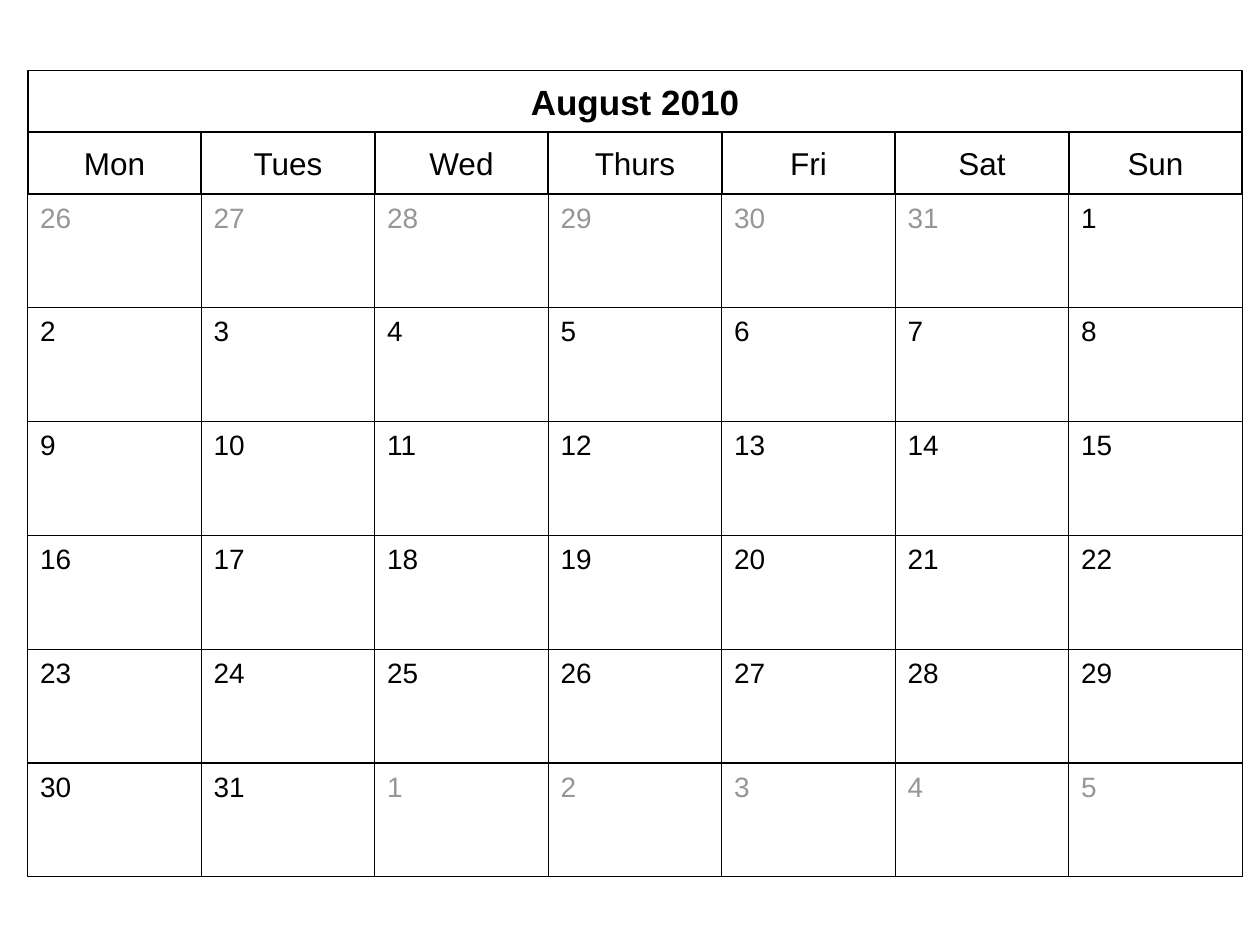
from pptx import Presentation
from pptx import util as u
from pptx.dml.color import RGBColor
from pptx.enum import shapes, text

BLACK = RGBColor(0x00, 0x00, 0x00)
WHITE = RGBColor(0xFF, 0xFF, 0xFF)
GREY = RGBColor(0x96, 0x96, 0x96)
FONT = "Arial"
WEEKDAYS = ["Mon", "Tues", "Wed", "Thurs", "Fri", "Sat", "Sun"]
WEEKS = 6
MONTH_DAYS = 31
PREVIOUS_DAYS = range(26, 32)
NEXT_DAYS = range(1, 6)


def write(box, words, size, color, bold=False):
    """Put one formatted run in the box and return its paragraph."""
    box.text_frame.word_wrap = True
    para = box.text_frame.paragraphs[0]
    span = para.add_run()
    span.text = words
    span.font.name = FONT
    span.font.size = u.Pt(size)
    span.font.bold = bold
    span.font.color.rgb = color
    return para


def style_header(box, words, size, bold=False):
    """Give a box the white, centred look of the calendar head."""
    box.fill.solid()
    box.fill.fore_color.rgb = WHITE
    box.line.color.rgb = BLACK
    box.line.width = u.Pt(1)
    frame = box.text_frame
    frame.auto_size = text.MSO_AUTO_SIZE.NONE
    frame.vertical_anchor = text.MSO_ANCHOR.MIDDLE
    frame.margin_left = frame.margin_right = u.Inches(0.1)
    frame.margin_top = frame.margin_bottom = u.Inches(0.02)
    write(box, words, size, BLACK, bold).alignment = text.PP_ALIGN.CENTER


def add_cell(page, left, top, width, height):
    """Add a plain rectangle without a shadow."""
    cell = page.shapes.add_shape(shapes.MSO_SHAPE.RECTANGLE, left, top, width, height)
    cell.shadow.inherit = False
    return cell


def place_title(page, left, top, width, height):
    """Fit the title placeholder to the month bar."""
    title = page.shapes.title
    title.left, title.top, title.width, title.height = left, top, width, height
    style_header(title, "August 2010", 20, bold=True)


def add_weekdays(page, left, top, width, height):
    """Divide the box into seven weekday names."""
    step = width / len(WEEKDAYS)
    for column, name in enumerate(WEEKDAYS):
        cell = add_cell(page, int(left + column * step), top, int(step), height)
        style_header(cell, name, 18)


def add_days(page, left, top, width, height):
    """Divide the box into a grid of dates, with other months in grey."""
    days = [(day, GREY) for day in PREVIOUS_DAYS]
    days += [(day, BLACK) for day in range(1, MONTH_DAYS + 1)]
    days += [(day, GREY) for day in NEXT_DAYS]
    step_x, step_y = width / len(WEEKDAYS), height / WEEKS
    for index, (day, color) in enumerate(days):
        row, column = divmod(index, len(WEEKDAYS))
        cell = add_cell(page, int(left + column * step_x), int(top + row * step_y),
                        int(step_x), int(step_y))
        cell.fill.background()
        cell.line.color.rgb = BLACK
        cell.line.width = u.Pt(0.75)
        cell.text_frame.vertical_anchor = text.MSO_ANCHOR.TOP
        write(cell, str(day), 16, color).alignment = text.PP_ALIGN.LEFT


def main():
    """Build the calendar slide and save it."""
    deck = Presentation()
    deck.slide_width, deck.slide_height = u.Inches(10), u.Inches(7.5)
    page = deck.slides.add_slide(deck.slide_layouts[5])
    left, width = u.Inches(0.22), u.Inches(9.64)
    place_title(page, left, u.Inches(0.56), width, u.Inches(0.49))
    add_weekdays(page, left, u.Inches(1.05), width, u.Inches(0.49))
    add_days(page, left, u.Inches(1.54), width, u.Inches(5.42))
    deck.save("out.pptx")


if __name__ == "__main__":
    main()
